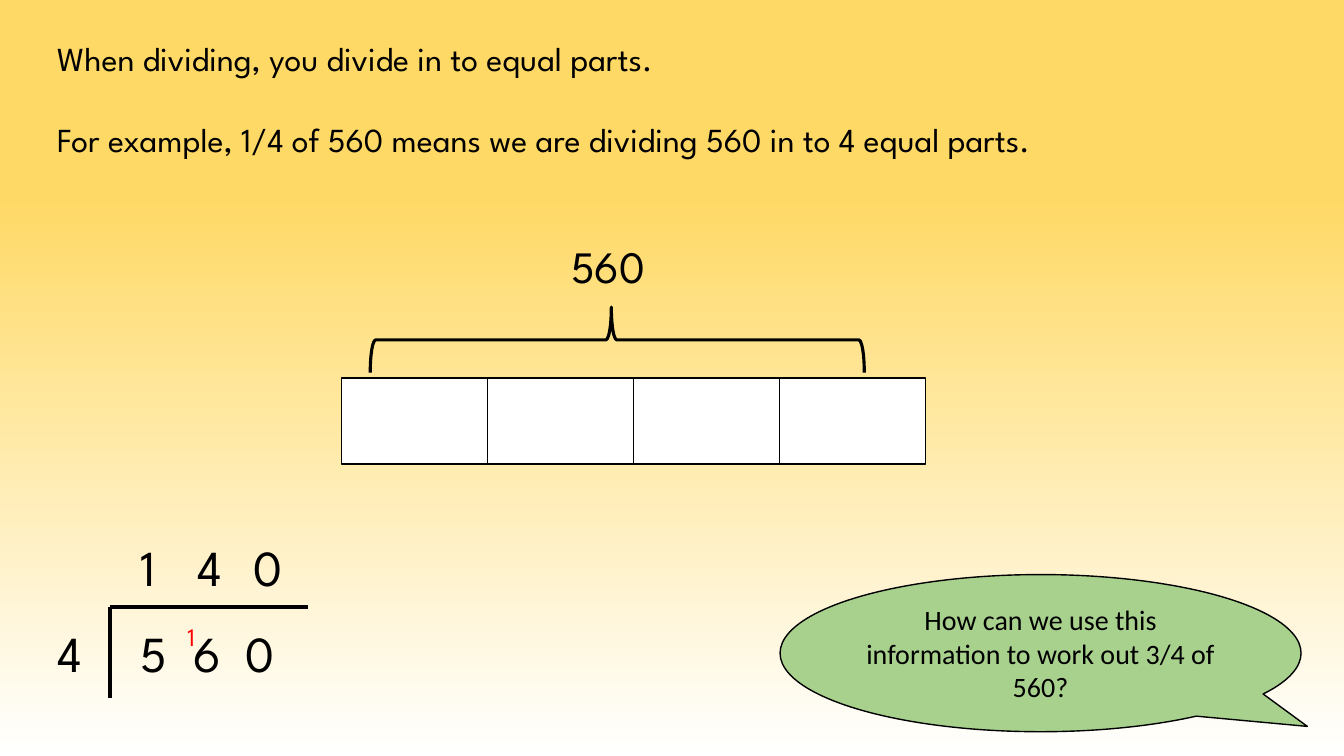
from lxml.etree import SubElement
from pptx import Presentation
from pptx.dml.color import RGBColor
from pptx.enum.shapes import MSO_CONNECTOR, MSO_SHAPE
from pptx.enum.text import MSO_ANCHOR, MSO_AUTO_SIZE, PP_ALIGN
from pptx.oxml.ns import qn
from pptx.util import Cm, Pt

BLACK, WHITE, RED = "000000", "FFFFFF", "FF0000"
YELLOW, GREEN = "FFD966", "A9D18E"
LESSON_FONT, CALLOUT_FONT = "League Spartan", "Calibri"


def color(hex_string):
    return RGBColor.from_string(hex_string)


def set_background(slide):
    fill = slide.background.fill
    fill.gradient()
    fill.gradient_angle = 270
    for stop, position, shade in zip(fill.gradient_stops, (0.26, 1), (YELLOW, WHITE)):
        stop.position = position
        stop.color.rgb = color(shade)


def add_run(paragraph, text, size, font=LESSON_FONT, shade=BLACK):
    run = paragraph.add_run()
    run.text = text
    run.font.name = font
    run.font.size = Pt(size)
    run.font.color.rgb = color(shade)


def add_text(slide, lines, left, top, width, height, size, shade=BLACK, wrap=False, gap=0):
    box = slide.shapes.add_textbox(Cm(left), Cm(top), Cm(width), Cm(height))
    frame = box.text_frame
    frame.word_wrap = wrap
    frame.auto_size = MSO_AUTO_SIZE.SHAPE_TO_FIT_TEXT
    for index, line in enumerate(lines):
        paragraph = frame.add_paragraph() if index else frame.paragraphs[0]
        if index:
            paragraph.space_before = Pt(gap)
        add_run(paragraph, line, size, shade=shade)


def add_shape(slide, kind, left, top, width, height, fill=None, line_width=1, adjustments=()):
    shape = slide.shapes.add_shape(kind, Cm(left), Cm(top), Cm(width), Cm(height))
    shape.shadow.inherit = False
    if fill:
        shape.fill.solid()
        shape.fill.fore_color.rgb = color(fill)
    else:
        shape.fill.background()
    shape.line.color.rgb = color(BLACK)
    shape.line.width = Pt(line_width)
    for index, value in enumerate(adjustments):
        shape.adjustments[index] = value
    return shape


def add_line(slide, x1, y1, x2, y2):
    line = slide.shapes.add_connector(MSO_CONNECTOR.STRAIGHT, Cm(x1), Cm(y1), Cm(x2), Cm(y2))
    line.line.color.rgb = color(BLACK)
    line.line.width = Pt(3)
    SubElement(line._element.spPr, qn("a:effectLst"))


def add_digits(slide, digits, left, top, step=0):
    for index, digit in enumerate(digits):
        add_text(slide, [digit], left + index * step, top, 1.22, 1.8, 36)


def add_bar_model(slide):
    for part in range(4):
        add_shape(slide, MSO_SHAPE.RECTANGLE, 8.61 + part * 3.68, 9.53, 3.68, 2.16, WHITE)
    brace = add_shape(slide, MSO_SHAPE.LEFT_BRACE, 14.73, 2.34, 1.65, 12.45,
                      line_width=2.25, adjustments=(0.083, 0.512))
    brace.rotation = 90
    add_text(slide, ["560"], 14.15, 5.89, 2.41, 1.63, 32)


def add_short_division(slide):
    corner_x, corner_y = 2.77, 15.29
    add_line(slide, corner_x, corner_y, corner_x, 17.58)
    add_line(slide, corner_x, corner_y, 7.77, corner_y)
    add_digits(slide, "4", 1.19, 15.54)
    add_digits(slide, "560", 3.3, 15.54, 1.32)
    add_digits(slide, "140", 3.3, 13.39, 1.42)
    # Carried digit
    add_text(slide, ["1"], 4.47, 15.54, 0.86, 1.02, 18, RED)


def add_question(slide):
    callout = add_shape(slide, MSO_SHAPE.OVAL_CALLOUT, 19.66, 14.48, 13.13, 3.96,
                        GREEN, adjustments=(0.512, 0.466))
    frame = callout.text_frame
    frame.word_wrap = True
    frame.vertical_anchor = MSO_ANCHOR.MIDDLE
    paragraph = frame.paragraphs[0]
    paragraph.alignment = PP_ALIGN.CENTER
    add_run(paragraph, "How can we use this information to work out 3/4 of 560?", 20, CALLOUT_FONT)


def main():
    presentation = Presentation()
    presentation.slide_width, presentation.slide_height = Cm(33.87), Cm(19.05)
    slide = presentation.slides.add_slide(presentation.slide_layouts[6])
    set_background(slide)

    # Explanation
    add_text(slide, ["When dividing, you divide in to equal parts.",
                     "For example, 1/4 of 560 means we are dividing 560 in to 4 equal parts."],
             1.19, 0.84, 32.16, 3.33, 24, wrap=True, gap=29)

    # Worked example and question
    add_bar_model(slide)
    add_short_division(slide)
    add_question(slide)
    presentation.save("out.pptx")


if __name__ == "__main__":
    main()
